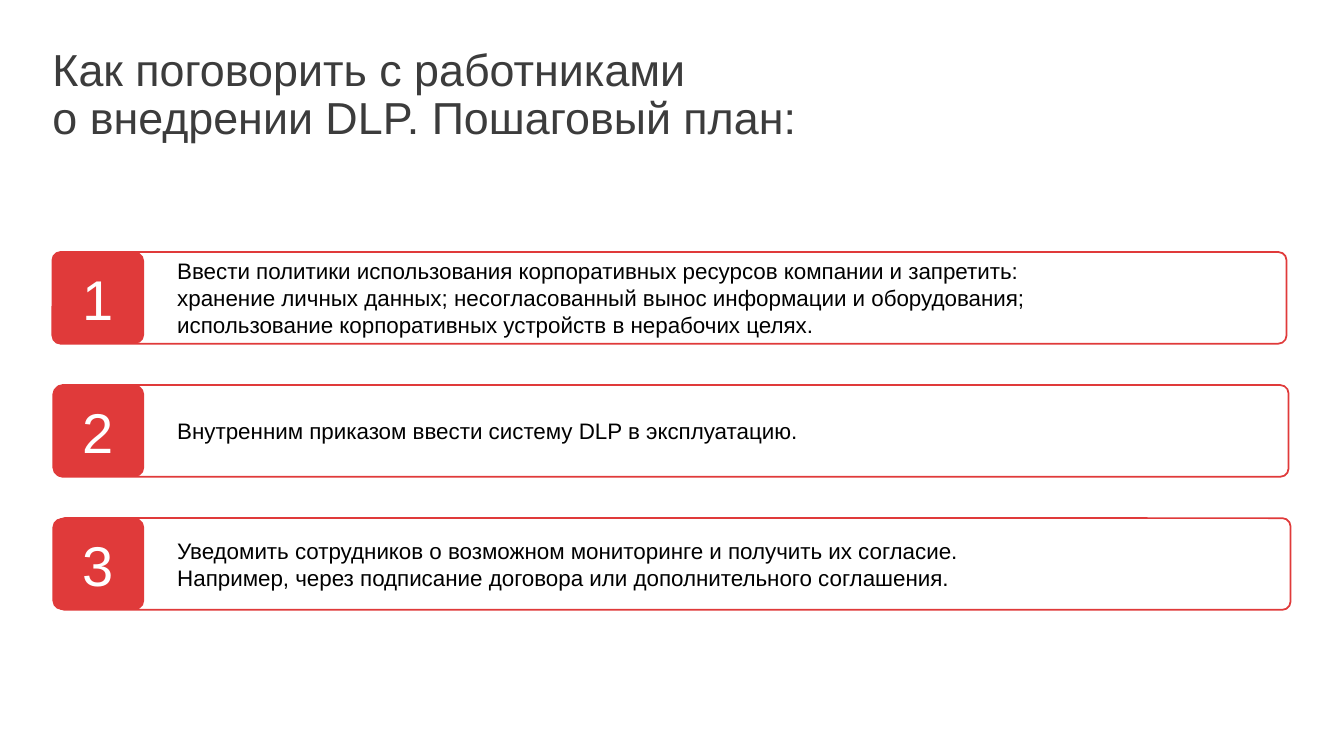
import pptx
import pptx.util
import pptx.dml.color
import pptx.enum.shapes
import pptx.enum.text

Inches = pptx.util.Inches
ALIGN = pptx.enum.text.PP_ALIGN
COLORS = {"title": "3C3C3C", "text": "000000", "accent": "E03A3A", "number": "FFFFFF"}
TITLE = ["Как поговорить с работниками ", "о внедрении DLP. Пошаговый план:"]
STEPS = [
    ["Ввести политики использования корпоративных ресурсов компании и запретить: ",
     "хранение личных данных; несогласованный вынос информации и оборудования; ",
     "использование корпоративных устройств в нерабочих целях."],
    ["Внутренним приказом ввести систему DLP в эксплуатацию."],
    ["Уведомить сотрудников о возможном мониторинге и получить их согласие.",
     "Например, через подписание договора или дополнительного соглашения."],
]


def rgb(name):
    """Return the named colour."""
    return pptx.dml.color.RGBColor.from_string(COLORS[name])


def write(tf, lines, size, color, align=ALIGN.LEFT, spacing=None):
    """Write lines as one formatted paragraph, centred vertically."""
    tf.word_wrap = True
    tf.auto_size = pptx.enum.text.MSO_AUTO_SIZE.NONE
    tf.vertical_anchor = pptx.enum.text.MSO_ANCHOR.MIDDLE
    p = tf.paragraphs[0]
    p.alignment = align
    p.line_spacing = spacing
    for i, line in enumerate(lines):
        if i:
            p.add_line_break()
        r = p.add_run()
        r.text = line
        r.font.name = "Arial"
        r.font.size = pptx.util.Pt(size)
        r.font.color.rgb = rgb(color)


def add_rounded(s, x, y, w, h, radius, fill=None, line=None):
    """Add a rounded rectangle with an optional fill and outline."""
    sp = s.shapes.add_shape(pptx.enum.shapes.MSO_SHAPE.ROUNDED_RECTANGLE,
                            Inches(x), Inches(y), Inches(w), Inches(h))
    sp.adjustments[0] = radius
    sp.shadow.inherit = False
    if fill:
        sp.fill.solid()
        sp.fill.fore_color.rgb = rgb(fill)
    else:
        sp.fill.background()
    if line:
        sp.line.color.rgb = rgb(line)
        sp.line.width = pptx.util.Pt(1.25)
    else:
        sp.line.fill.background()
    return sp


def add_title(s, x, y, w, h):
    """Place and fill the title."""
    sp = s.shapes.title
    sp.left, sp.top, sp.width, sp.height = Inches(x), Inches(y), Inches(w), Inches(h)
    write(sp.text_frame, TITLE, 32, "title", spacing=0.9)


def add_step(s, number, lines, x, y, w, h, shift):
    """Add a step: its text, numbered badge and frame."""
    tb = s.shapes.add_textbox(Inches(x + 1.14), Inches(y), Inches(w - 1.14), Inches(h))
    write(tb.text_frame, lines, 16, "text")
    badge = add_rounded(s, x, y, h, h, 0.1, fill="accent")
    write(badge.text_frame, [str(number)], 40, "number", align=ALIGN.CENTER)
    add_rounded(s, x + shift, y, w, h, 0.09, line="accent")


def main():
    """Build and save the slide."""
    prs = pptx.Presentation()
    prs.slide_width, prs.slide_height = Inches(13.33), Inches(7.5)
    s = prs.slides.add_slide(prs.slide_layouts[5])
    add_title(s, 0.42, 0.4, 9.52, 1.1)
    for i, lines in enumerate(STEPS):
        add_step(s, i + 1, lines, 0.52, 2.5 + 1.32 * i, 12.24, 0.91, shift=0.02 * i)
    prs.save("out.pptx")


if __name__ == "__main__":
    main()
